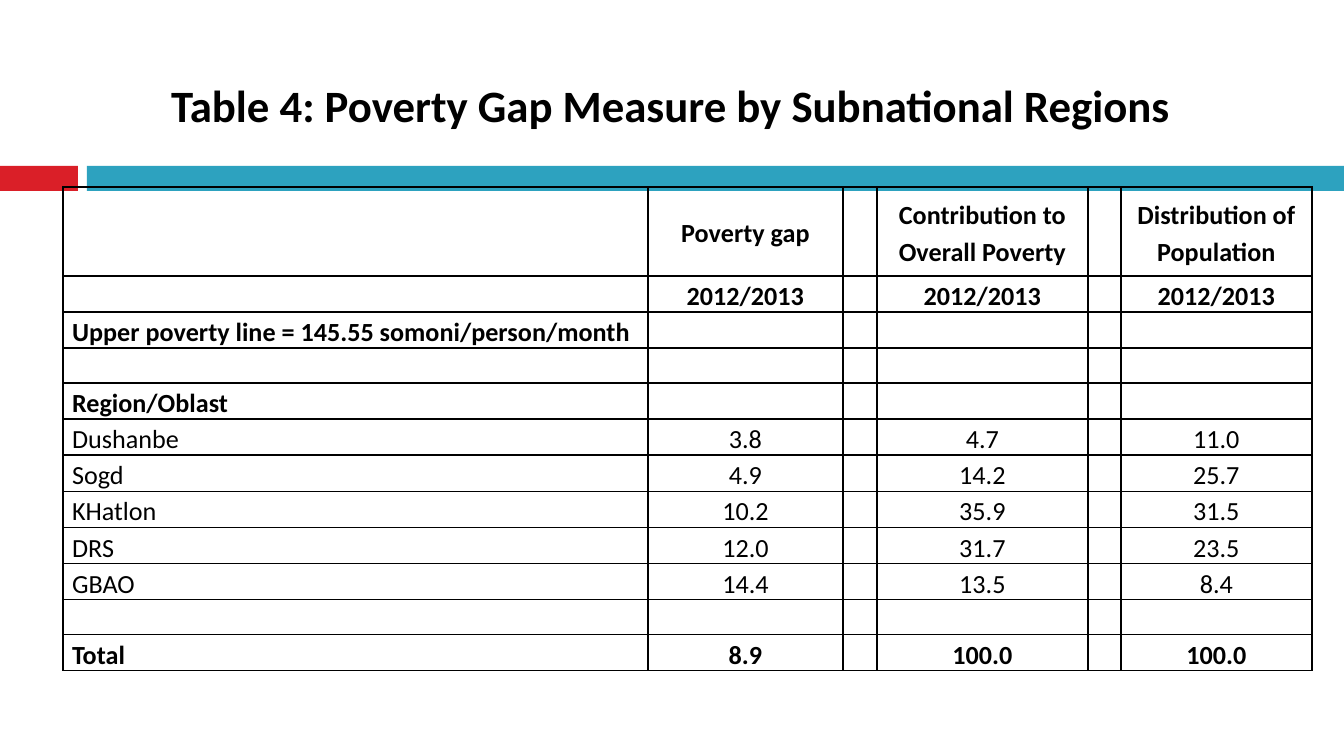
"""Builds a slide with a table of the poverty gap by subnational region."""
import pptx
import pptx.dml.color
import pptx.enum.shapes
import pptx.enum.text
import pptx.util
from lxml import etree

PX = 914400 / 134.4
RED = pptx.dml.color.RGBColor(0xDA, 0x1F, 0x28)
TEAL = pptx.dml.color.RGBColor(0x2D, 0xA2, 0xBF)
BLACK = pptx.dml.color.RGBColor(0, 0, 0)
NS = "{http://schemas.openxmlformats.org/drawingml/2006/main}"
CENTER = pptx.enum.text.PP_ALIGN.CENTER
LEFT = pptx.enum.text.PP_ALIGN.LEFT


def px(*lengths):
    return [pptx.util.Emu(round(length * PX)) for length in lengths]


def style(paragraph, size, bold, alignment):
    paragraph.alignment = alignment
    paragraph.line_spacing = 1.15
    paragraph.font.name = "Calibri"
    paragraph.font.size = pptx.util.Pt(size)
    paragraph.font.bold = bold
    paragraph.font.color.rgb = BLACK


deck = pptx.Presentation()
deck.slide_width, deck.slide_height = px(1344, 756)
slide = deck.slides.add_slide(deck.slide_layouts[6])

for left, width, color in [(0, 78, RED), (87, 1257, TEAL)]:
    band = slide.shapes.add_shape(
        pptx.enum.shapes.MSO_SHAPE.RECTANGLE, *px(left, 166, width, 25))
    band.shadow.inherit = False
    band.fill.solid()
    band.fill.fore_color.rgb = color
    band.line.fill.background()

heading = slide.shapes.add_textbox(*px(71, 26, 1199, 112)).text_frame
heading.word_wrap = True
heading.vertical_anchor = pptx.enum.text.MSO_ANCHOR.BOTTOM
heading.text = "Table 4: Poverty Gap Measure by Subnational Regions"
style(heading.paragraphs[0], 24, True, CENTER)

EMPTY = ("", "", "", "")
rows = [
    (38, EMPTY),
    (89, ("", "Poverty gap", "Contribution to Overall Poverty", "Distribution of Population")),
    (36, ("", "2012/2013", "2012/2013", "2012/2013")),
    (36, ("Upper poverty line = 145.55 somoni/person/month", "", "", "")),
    (35, EMPTY),
    (36, ("Region/Oblast", "", "", "")),
    (36, ("Dushanbe", "3.8", "4.7", "11.0")),
    (36, ("Sogd", "4.9", "14.2", "25.7")),
    (36, ("KHatlon", "10.2", "35.9", "31.5")),
    (36, ("DRS", "12.0", "31.7", "23.5")),
    (36, ("GBAO", "14.4", "13.5", "8.4")),
    (35, EMPTY),
    (36, ("Total", "8.9", "100.0", "100.0")),
    (35, EMPTY),
    (28, EMPTY),
]
column_widths = [585, 195, 34, 211, 33, 191]
region_rows = range(6, 11)
ruled_rows = range(1, 13)

regions = slide.shapes.add_table(
    len(rows), len(column_widths),
    *px(63, 149, sum(column_widths), sum(height for height, _ in rows))).table
regions.first_row = False
regions.horz_banding = False
for column, width in zip(regions.columns, column_widths):
    column.width = px(width)[0]

for r, (height, (label, gap, contribution, distribution)) in enumerate(rows):
    regions.rows[r].height = px(height)[0]
    for c, text in enumerate([label, gap, "", contribution, "", distribution]):
        cell = regions.cell(r, c)
        cell.text = text
        cell.margin_left, cell.margin_right, cell.margin_top, cell.margin_bottom = px(9, 9, 0, 0)
        cell.vertical_anchor = pptx.enum.text.MSO_ANCHOR.MIDDLE
        style(cell.text_frame.paragraphs[0], 14 if text else 12,
              r not in region_rows, CENTER if c else LEFT)
        properties = cell._tc.get_or_add_tcPr()
        for side in "LRTB":
            ruled = r in ruled_rows or (r, side) in [(0, "B"), (13, "T")]
            border = etree.SubElement(properties, NS + "ln" + side, w="12700")
            if ruled:
                fill = etree.SubElement(border, NS + "solidFill")
                etree.SubElement(fill, NS + "srgbClr", val=str(BLACK))
            else:
                etree.SubElement(border, NS + "noFill")
        cell.fill.background()

regions.cell(0, 0).merge(regions.cell(0, 5))

deck.save("out.pptx")
